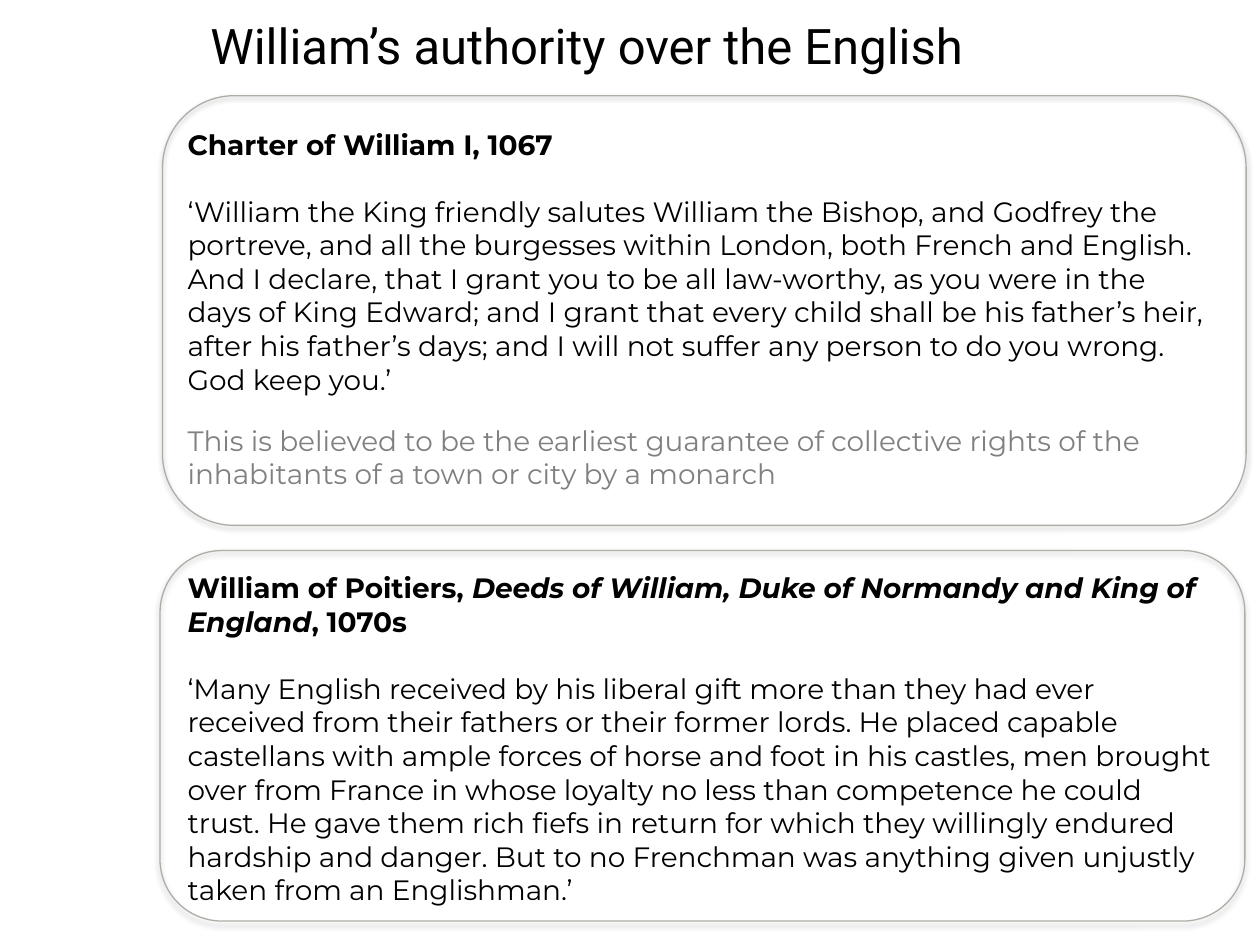
from lxml import etree
from pptx import Presentation
from pptx.dml.color import RGBColor
from pptx.enum import shapes, text
from pptx.oxml import parse_xml
from pptx.util import Inches, Pt

BLACK = RGBColor(0x00, 0x00, 0x00)
GREY = RGBColor(0x80, 0x80, 0x80)
FRAME_LINE = RGBColor(0xAB, 0xAF, 0xA6)
SOFT_SHADOW = (
    '<a:effectLst xmlns:a="http://schemas.openxmlformats.org/drawingml/2006/main">'
    '<a:outerShdw blurRad="39370" dist="22860" dir="5400000" rotWithShape="0">'
    '<a:srgbClr val="000000"><a:alpha val="35000"/></a:srgbClr>'
    '</a:outerShdw></a:effectLst>'
)

deck = Presentation()
deck.slide_width, deck.slide_height = Inches(10), Inches(7.5)
page = deck.slides.add_slide(deck.slide_layouts[5])

title = page.shapes.title
title.left, title.top = Inches(1.57), Inches(0.07)
title.width, title.height = Inches(7.74), Inches(0.57)
title.text_frame.text = "William’s authority over the English"
title.text_frame.vertical_anchor = text.MSO_ANCHOR.TOP
title.text_frame.auto_size = text.MSO_AUTO_SIZE.NONE
heading = title.text_frame.paragraphs[0]
heading.alignment = text.PP_ALIGN.LEFT
heading.font.name, heading.font.size = "Roboto", Pt(28)
heading.font.color.rgb = BLACK

# Rounded frames around the two sources
for left, top, width, height in [(1.29, 0.76, 8.6, 3.41), (1.27, 4.37, 8.61, 2.94)]:
    frame = page.shapes.add_shape(
        shapes.MSO_SHAPE.ROUNDED_RECTANGLE,
        Inches(left), Inches(top), Inches(width), Inches(height))
    frame.fill.background()
    frame.line.color.rgb = FRAME_LINE
    frame.line.width = Pt(0.75)
    frame._element.spPr.append(parse_xml(SOFT_SHADOW))

# Each passage: top, height, colour, paragraphs of (words, bold, italic)
passages = [
    (0.96, 2.26, BLACK, [
        [("Charter of William I, 1067", True, False)],
        [("‘William the King friendly salutes William the Bishop, and Godfrey the "
          "portreve, and all the burgesses within London, both French and English. "
          "And I declare, that I grant you to be all law-worthy, as you were in the "
          "days of King Edward; and I grant that every child shall be his father’s "
          "heir, after his father’s days; and I will not suffer any person to do you "
          "wrong. God keep you.’", False, False)],
    ]),
    (3.31, 0.64, GREY, [
        [("This is believed to be the earliest guarantee of collective rights of the "
          "inhabitants of a town or city by a monarch", False, False)],
    ]),
    (4.48, 2.83, BLACK, [
        [("William of Poitiers, ", True, False),
         ("Deeds of William, Duke of Normandy and King of England", True, True),
         (", 1070s", True, False)],
        [("‘Many English received by his liberal gift more than they had ever "
          "received from their fathers or their former lords. He placed capable "
          "castellans with ample forces of horse and foot in his castles, men brought "
          "over from France in whose loyalty no less than competence he could trust. "
          "He gave them rich fiefs in return for which they willingly endured hardship "
          "and danger. But to no Frenchman was anything given unjustly taken from an "
          "Englishman.’", False, False)],
    ]),
]

for top, height, colour, paragraphs in passages:
    box = page.shapes.add_textbox(Inches(1.39), Inches(top), Inches(8.36), Inches(height))
    body = box.text_frame
    body.word_wrap = True
    for index, spans in enumerate(paragraphs):
        para = body.add_paragraph() if index else body.paragraphs[0]
        if index:
            para.space_before = Pt(19.2)
        for words, bold, italic in spans:
            span = para.add_run()
            span.text = words
            span.font.name, span.font.size = "Montserrat", Pt(16)
            span.font.bold, span.font.italic = bold, italic
            span.font.color.rgb = colour

deck.save("out.pptx")
